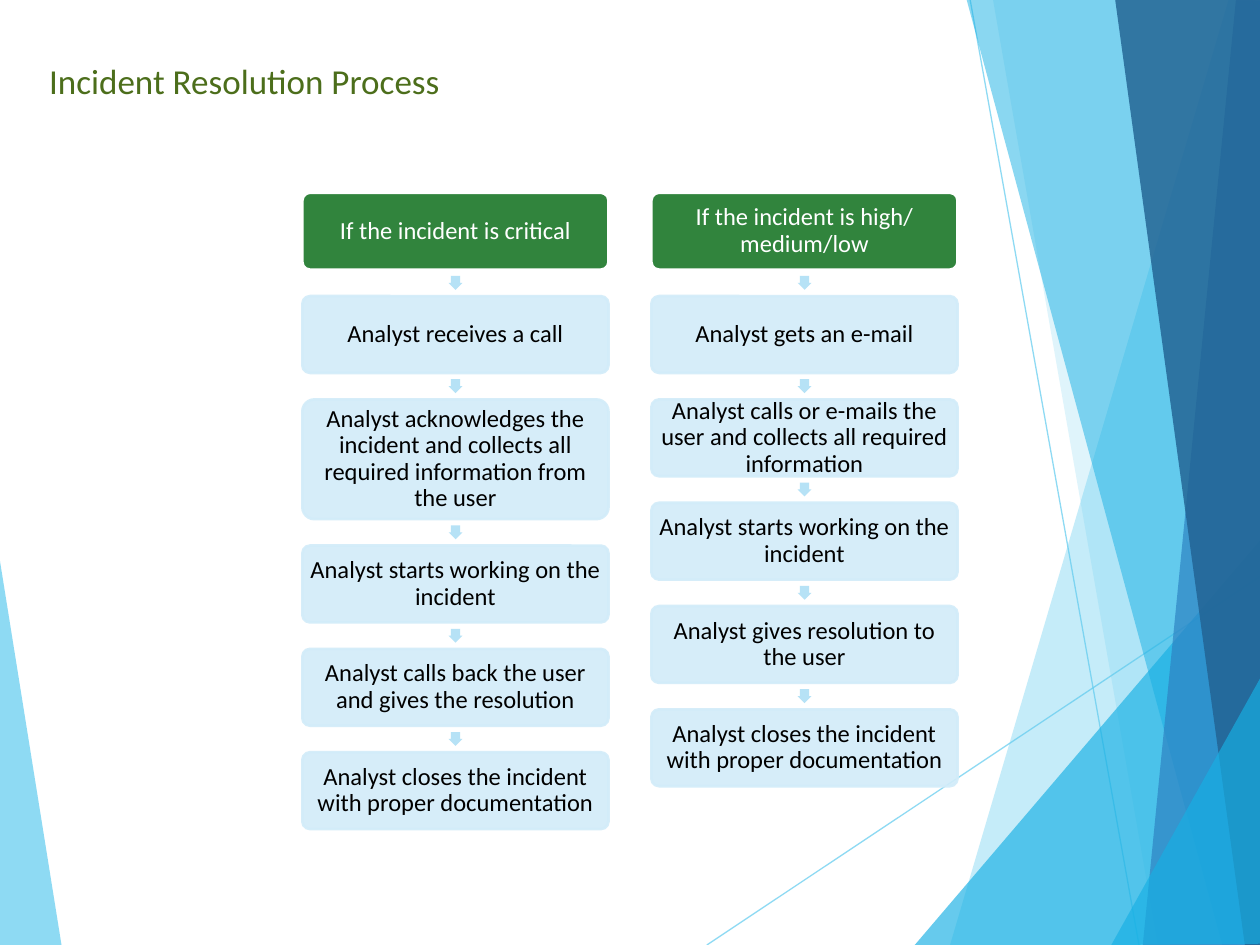
from lxml import etree
from pptx import Presentation
from pptx.dml.color import RGBColor
from pptx.enum.shapes import MSO_CONNECTOR, MSO_SHAPE
from pptx.enum.text import MSO_ANCHOR, PP_ALIGN
from pptx.oxml.ns import qn
from pptx.util import Inches, Pt

WHITE = RGBColor(0xFF, 0xFF, 0xFF)
BLACK = RGBColor(0, 0, 0)
SKY = RGBColor(0x5F, 0xCB, 0xEF)
CYAN = RGBColor(0x17, 0xB0, 0xE4)
BLUE = RGBColor(0x2E, 0x83, 0xC3)
NAVY = RGBColor(0x22, 0x62, 0x92)
TITLE_GREEN = RGBColor(0x4C, 0x6E, 0x1B)
HEADER_GREEN = RGBColor(0x31, 0x84, 0x3D)
STEP_BLUE = RGBColor(0xD2, 0xEC, 0xF9)
ARROW_BLUE = RGBColor(0xB6, 0xE2, 0xF6)

LEFT_WEDGE = (SKY, 70, [(-0.01, 4.39), (0.49, 7.51), (-0.01, 7.5)])
RIGHT_WEDGES = [
    (SKY, 36, [(9.75, 0), (7.54, 7.5), (10.02, 7.51), (10.01, 0.01)]),
    (SKY, 20, [(7.88, -0.01), (9.19, 7.5), (10.01, 7.5), (10.01, -0.01)]),
    (CYAN, 66, [(7.26, 7.5), (10, 4.29), (10.01, 7.5)]),
    (CYAN, 50, [(7.67, -0.01), (9.7, 7.5), (10.01, 7.49), (10.01, -0.01)]),
    (BLUE, 70, [(9.81, -0.01), (9.07, 7.5), (10.01, 7.5), (10, -0.01)]),
    (NAVY, 82, [(8.85, -0.01), (9.88, 7.5), (10.02, 7.5), (10, -0.01)]),
    (CYAN, 66, [(8.82, 7.5), (10.02, 5.35), (10.02, 7.49)]),
]
ACCENT_LINES = [(5.61, 7.5, 10.01, 4.57), (7.7, 0, 9.04, 7.5)]

# Each column: left edge, then (text, box height) from header to last step
BOX_HEIGHT = 0.61
COLUMNS = [
    (2.4, [
        ("If the incident is critical", BOX_HEIGHT),
        ("Analyst receives a call", BOX_HEIGHT),
        ("Analyst acknowledges the incident and collects all required "
         "information from the user", 0.95),
        ("Analyst starts working on the incident", BOX_HEIGHT),
        ("Analyst calls back the user and gives the resolution", BOX_HEIGHT),
        ("Analyst closes the incident with proper documentation", BOX_HEIGHT),
    ]),
    (5.17, [
        ("If the incident is high/ medium/low", BOX_HEIGHT),
        ("Analyst gets an e-mail", BOX_HEIGHT),
        ("Analyst calls or e-mails the user and collects all required information",
         BOX_HEIGHT),
        ("Analyst starts working on the incident", BOX_HEIGHT),
        ("Analyst gives resolution to the user", BOX_HEIGHT),
        ("Analyst closes the incident with proper documentation", BOX_HEIGHT),
    ]),
]
COLUMN_TOP, BOX_WIDTH, GAP, ARROW_SIZE = 1.53, 2.43, 0.21, 0.11


def paint(target, color, opacity=100):
    """Give a fill or a line one colour, with opacity in percent."""
    fill = getattr(target, "fill", target)
    fill.solid()
    fill.fore_color.rgb = color
    if opacity < 100:
        for element in fill._xPr.iterchildren(qn("a:solidFill")):
            alpha = etree.SubElement(element[0], qn("a:alpha"))
            alpha.set("val", str(opacity * 1000))


def add_wedge(color, opacity, points):
    corners = [(Inches(x), Inches(y)) for x, y in points]
    builder = slide.shapes.build_freeform(*corners[0])
    builder.add_line_segments(corners[1:], close=True)
    wedge = builder.convert_to_shape()
    wedge.shadow.inherit = False
    paint(wedge.fill, color, opacity)
    wedge.line.fill.background()


deck = Presentation()
deck.slide_width, deck.slide_height = Inches(10), Inches(7.5)
slide = deck.slides.add_slide(deck.slide_layouts[6])

# Background decoration
add_wedge(*LEFT_WEDGE)
for ends in ACCENT_LINES:
    accent = slide.shapes.add_connector(MSO_CONNECTOR.STRAIGHT, *map(Inches, ends))
    accent.line.width = Pt(0.75)
    paint(accent.line, SKY, 70)
    etree.SubElement(accent._element.spPr, qn("a:effectLst"))
for wedge_data in RIGHT_WEDGES:
    add_wedge(*wedge_data)

# Title
title = slide.shapes.add_textbox(Inches(0.17), Inches(0.42), Inches(3.46), Inches(0.44))
title.text_frame.word_wrap = False
title.text_frame.margin_left = Inches(0.22)
title.text_frame.text = "Incident Resolution Process"
title_font = title.text_frame.paragraphs[0].runs[0].font
title_font.name, title_font.size = "Calibri", Pt(20)
title_font.color.rgb = TITLE_GREEN

# Process columns
for left, steps in COLUMNS:
    top = COLUMN_TOP
    for index, (text, height) in enumerate(steps):
        is_header = index == 0
        if not is_header:
            arrow = slide.shapes.add_shape(
                MSO_SHAPE.RIGHT_ARROW,
                Inches(left + (BOX_WIDTH - ARROW_SIZE) / 2),
                Inches(top - (GAP + ARROW_SIZE) / 2),
                Inches(ARROW_SIZE), Inches(ARROW_SIZE))
            arrow.rotation = 90
            arrow.adjustments[0] = 0.67
            arrow.shadow.inherit = False
            paint(arrow.fill, ARROW_BLUE)
            arrow.line.fill.background()

        box = slide.shapes.add_shape(
            MSO_SHAPE.ROUNDED_RECTANGLE,
            Inches(left), Inches(top), Inches(BOX_WIDTH), Inches(height))
        box.adjustments[0] = 0.1
        box.shadow.inherit = False
        box.line.width = Pt(1.5)
        if is_header:
            paint(box.fill, HEADER_GREEN)
            paint(box.line, WHITE)
        else:
            paint(box.fill, STEP_BLUE, 90)
            paint(box.line, STEP_BLUE, 90)

        frame = box.text_frame
        frame.word_wrap = True
        frame.vertical_anchor = MSO_ANCHOR.MIDDLE
        frame.margin_left = frame.margin_right = Inches(0.02)
        frame.margin_top = frame.margin_bottom = Inches(0.02)
        frame.text = text
        para = frame.paragraphs[0]
        para.alignment = PP_ALIGN.CENTER
        para.line_spacing = 0.9
        font = para.runs[0].font
        font.name, font.size = "Calibri", Pt(14)
        font.color.rgb = WHITE if is_header else BLACK
        top += height + GAP

deck.save("out.pptx")
